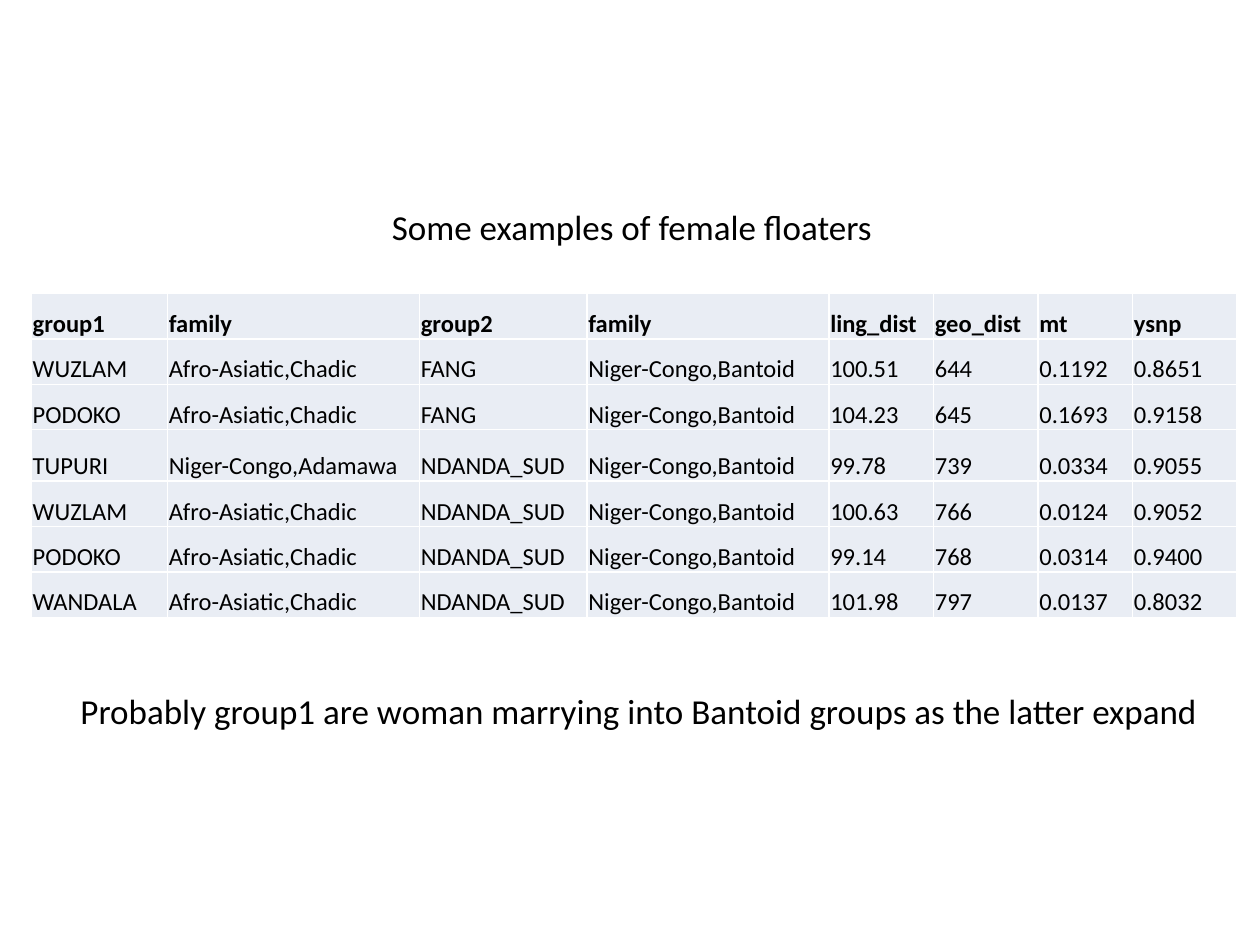
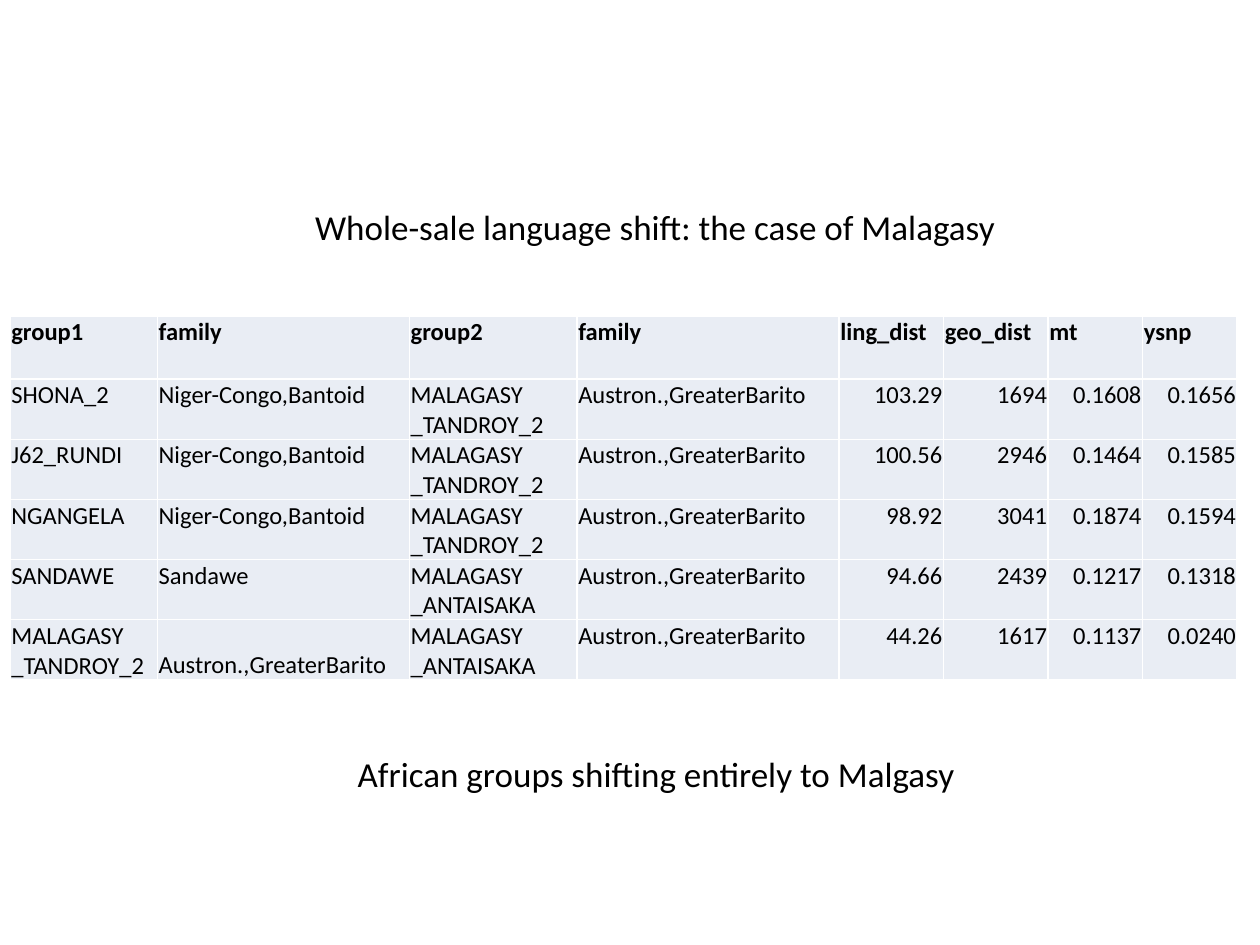
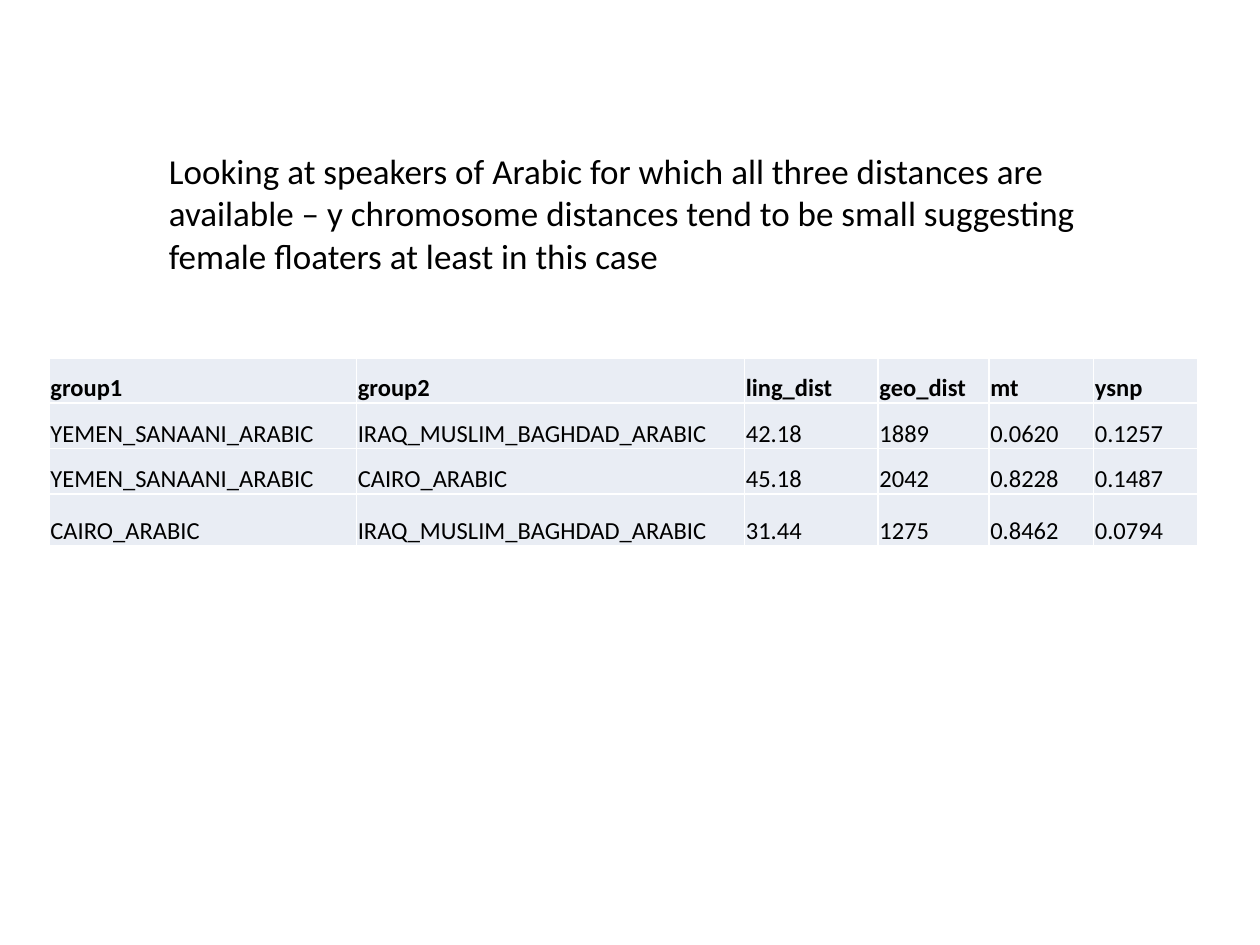
from dataclasses import dataclass

from pptx import Presentation
from pptx.dml.color import RGBColor
from pptx.enum.text import MSO_ANCHOR as Anchor, MSO_AUTO_SIZE as AutoSize, PP_ALIGN as Align
from pptx.util import Inches, Pt


@dataclass(frozen=True)
class Theme:
    font: str = "Calibri"
    ink: RGBColor = RGBColor(0x00, 0x00, 0x00)
    cell: RGBColor = RGBColor(0xE9, 0xED, 0xF4)
    text_size: int = 20
    cell_size: int = 14


THEME = Theme()
SLIDE_SIZE = (10, 7.5)
LINE_HEIGHT = 0.44
TITLE_TOP = 1.58
TITLE_ONLY = 5
CELL_MARGINS = {"margin_left": 0.01, "margin_right": 0.01, "margin_top": 0.01, "margin_bottom": 0}

DISTANCES = ("ling_dist", "geo_dist", "mt", "ysnp")
FAMILY_HEADER = ("group1", "family", "group2", "family", *DISTANCES)
CHADIC, ADAMAWA = "Afro-Asiatic,Chadic", "Niger-Congo,Adamawa"
BANTOID, BARITO = "Niger-Congo,Bantoid", "Austron.,GreaterBarito"
TANDROY, ANTAISAKA = "MALAGASY\n_TANDROY_2", "MALAGASY\n_ANTAISAKA"
YEMEN, CAIRO, BAGHDAD = "YEMEN_SANAANI_ARABIC", "CAIRO_ARABIC", "IRAQ_MUSLIM_BAGHDAD_ARABIC"

# Boxes are (left, top, width, height) in inches.
SLIDES = [
    {
        "title": "Some examples of female floaters",
        "title_box": (3.01, TITLE_TOP, 4.05, LINE_HEIGHT),
        "caption": "Probably group1 are woman marrying into Bantoid groups as the latter expand",
        "caption_box": (0.54, 5.42, 9.15, LINE_HEIGHT),
        "table": {
            "origin": (0.25, 2.33),
            "columns": (1.08, 2, 1.33, 1.92, 0.83, 0.83, 0.75, 0.83),
            "heights": (0.36, 0.36, 0.36, 0.41, 0.36, 0.36, 0.36),
            "rows": [
                FAMILY_HEADER,
                ("WUZLAM", CHADIC, "FANG", BANTOID, "100.51", "644", "0.1192", "0.8651"),
                ("PODOKO", CHADIC, "FANG", BANTOID, "104.23", "645", "0.1693", "0.9158"),
                ("TUPURI", ADAMAWA, "NDANDA_SUD", BANTOID, "99.78", "739", "0.0334", "0.9055"),
                ("WUZLAM", CHADIC, "NDANDA_SUD", BANTOID, "100.63", "766", "0.0124", "0.9052"),
                ("PODOKO", CHADIC, "NDANDA_SUD", BANTOID, "99.14", "768", "0.0314", "0.9400"),
                ("WANDALA", CHADIC, "NDANDA_SUD", BANTOID, "101.98", "797", "0.0137", "0.8032"),
            ],
        },
    },
    {
        "title": "Whole-sale language shift: the case of Malagasy",
        "title_box": (2.4, TITLE_TOP, 5.66, LINE_HEIGHT),
        "caption": "African groups shifting entirely to Malgasy",
        "caption_box": (2.74, 5.92, 4.99, LINE_HEIGHT),
        "table": {
            "origin": (0.08, 2.51),
            "columns": (1.17, 2, 1.33, 2.08, 0.83, 0.83, 0.75, 0.75),
            "heights": (0.5, *[0.47] * 5),
            "anchor": Anchor.TOP,
            "bottom_cells": {(5, 1)},
            "right_from": 4,
            "rows": [
                FAMILY_HEADER,
                ("SHONA_2", BANTOID, TANDROY, BARITO, "103.29", "1694", "0.1608", "0.1656"),
                ("J62_RUNDI", BANTOID, TANDROY, BARITO, "100.56", "2946", "0.1464", "0.1585"),
                ("NGANGELA", BANTOID, TANDROY, BARITO, "98.92", "3041", "0.1874", "0.1594"),
                ("SANDAWE", "Sandawe", ANTAISAKA, BARITO, "94.66", "2439", "0.1217", "0.1318"),
                (TANDROY, BARITO, ANTAISAKA, BARITO, "44.26", "1617", "0.1137", "0.0240"),
            ],
        },
    },
    {
        "title": "Looking at speakers of Arabic for which all three distances are available – "
                 "y chromosome distances tend to be small suggesting female floaters "
                 "at least in this case",
        "title_box": (1.24, 1.14, 7.5, 1.11),
        "title_wraps": True,
        "table": {
            "origin": (0.39, 2.84),
            "columns": (2.44, 3.08, 1.06, 0.88, 0.83, 0.83),
            "heights": (0.36, 0.36, 0.36, 0.41),
            "rows": [
                ("group1", "group2", *DISTANCES),
                (YEMEN, BAGHDAD, "42.18", "1889", "0.0620", "0.1257"),
                (YEMEN, CAIRO, "45.18", "2042", "0.8228", "0.1487"),
                (CAIRO, BAGHDAD, "31.44", "1275", "0.8462", "0.0794"),
            ],
        },
    },
]


def assign(target, values):
    for name, value in values.items():
        setattr(target, name, value)


def write(frame, text, size, bold=False, align=Align.LEFT):
    frame.text = text
    for para in frame.paragraphs:
        para.alignment = align
        for span in para.runs:
            assign(span.font, {"name": THEME.font, "size": Pt(size), "bold": bold})
            span.font.color.rgb = THEME.ink


def format_text(shape, text, box, wraps=False):
    assign(shape, dict(zip(("left", "top", "width", "height"), map(Inches, box))))
    write(shape.text_frame, text, THEME.text_size)
    assign(shape.text_frame, {
        "word_wrap": wraps,
        "auto_size": AutoSize.SHAPE_TO_FIT_TEXT,
        "vertical_anchor": Anchor.TOP,
    })


def add_distance_table(page, content):
    rows, columns, heights = (content[key] for key in ("rows", "columns", "heights"))
    size = (sum(columns), sum(heights))
    frame = page.shapes.add_table(
        len(rows), len(columns), *map(Inches, (*content["origin"], *size)))
    table = frame.table
    assign(table, {"first_row": False, "horz_banding": False})
    for column, width in zip(table.columns, columns):
        column.width = Inches(width)
    for row, height in zip(table.rows, heights):
        row.height = Inches(height)

    right_from = content.get("right_from", len(columns))
    for r, values in enumerate(rows):
        for c, value in enumerate(values):
            cell = table.cell(r, c)
            is_header = r == 0
            align = Align.RIGHT if c >= right_from and not is_header else Align.LEFT
            write(cell.text_frame, value, THEME.cell_size, is_header, align)
            assign(cell, {side: Inches(gap) for side, gap in CELL_MARGINS.items()})
            at_bottom = (r, c) in content.get("bottom_cells", ())
            cell.vertical_anchor = Anchor.BOTTOM if at_bottom else content.get("anchor", Anchor.BOTTOM)
            cell.fill.solid()
            cell.fill.fore_color.rgb = THEME.cell


def main():
    deck = Presentation()
    deck.slide_width, deck.slide_height = map(Inches, SLIDE_SIZE)
    for content in SLIDES:
        page = deck.slides.add_slide(deck.slide_layouts[TITLE_ONLY])
        format_text(page.shapes.title, content["title"], content["title_box"],
                    content.get("title_wraps", False))
        add_distance_table(page, content["table"])
        if "caption" in content:
            box = content["caption_box"]
            caption = page.shapes.add_textbox(*map(Inches, box))
            format_text(caption, content["caption"], box)
    deck.save("out.pptx")


if __name__ == "__main__":
    main()
